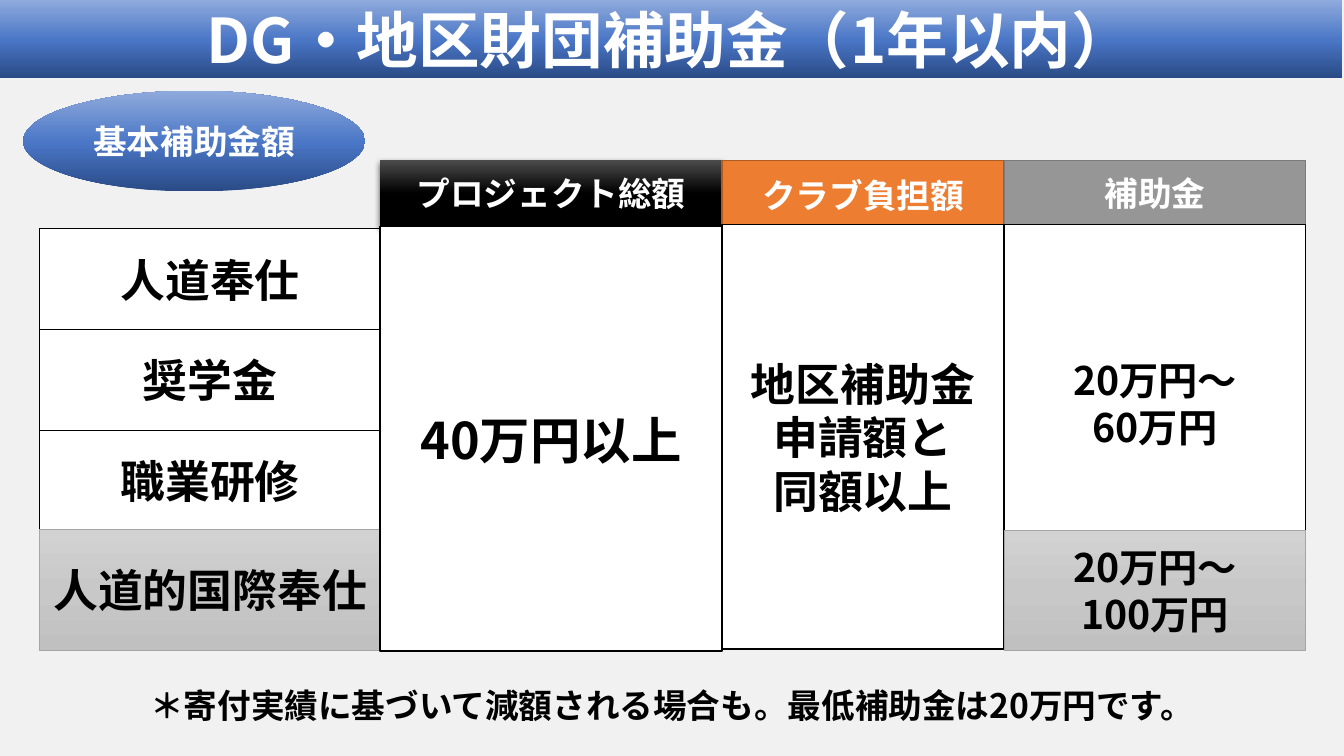
from lxml.etree import SubElement
from pptx import Presentation
from pptx.dml.color import RGBColor
from pptx.enum.shapes import MSO_SHAPE
from pptx.enum.text import MSO_ANCHOR, MSO_AUTO_SIZE, PP_ALIGN
from pptx.oxml.ns import qn
from pptx.util import Inches, Pt

COLORS = {
    "background": "F1F1F1", "white": "FFFFFF", "black": "000000",
    "orange": "ED7D31", "orange_line": "AF5C24",
    "gray": "969696", "gray_line": "7A7A7A", "silver_line": "A5A5A5",
}
# Each gradient: stops as (percent, colour), then the angle counted counter-clockwise
GRADIENTS = {
    "blue": ([(0, "2A4B86"), (48, "4A76C6"), (100, "8FAADC")], 90),
    "silver": ([(0, "D2D2D2"), (50, "C8C8C8"), (100, "C0C0C0")], 270),
    "black_gloss": ([(0, "4B4B4B"), (50, "000000"), (100, "000000")], 270),
}


class GrantSlide:
    """Holds the shared style and the slide being built."""

    font = "Noto Sans CJK JP"

    def __init__(self, presentation):
        self.slide = presentation.slides.add_slide(presentation.slide_layouts[5])
        fill = self.slide.background.fill
        fill.solid()
        fill.fore_color.rgb = self.color("background")

    def color(self, name):
        return RGBColor.from_string(COLORS[name])

    def place(self, shape, box):
        shape.left, shape.top, shape.width, shape.height = map(Inches, box)

    def paint(self, shape, fill):
        if fill not in GRADIENTS:
            shape.fill.solid()
            shape.fill.fore_color.rgb = self.color(fill)
            return
        stops, angle = GRADIENTS[fill]
        shape.fill.gradient()
        shape.fill.gradient_angle = angle
        stop_list = shape._element.spPr.find(".//" + qn("a:gsLst"))
        for stop in list(stop_list):
            stop_list.remove(stop)
        for percent, value in stops:
            stop = SubElement(stop_list, qn("a:gs"), pos=str(percent * 1000))
            SubElement(stop, qn("a:srgbClr"), val=value)

    def add_lines(self, shape, lines, size, color, align=PP_ALIGN.CENTER):
        frame = shape.text_frame
        frame.word_wrap = True
        for index, line in enumerate(lines):
            paragraph = frame.paragraphs[0] if index == 0 else frame.add_paragraph()
            paragraph.alignment = align
            run = paragraph.add_run()
            run.text = line
            run.font.size = Pt(size)
            run.font.bold = True
            run.font.name = self.font
            run.font.color.rgb = self.color(color)
            SubElement(run._r.get_or_add_rPr(), qn("a:ea"), typeface=self.font)

    def title(self, box, text):
        shape = self.slide.shapes.title
        self.place(shape, box)
        self.paint(shape, "blue")
        shape.text_frame.auto_size = MSO_AUTO_SIZE.NONE
        shape.text_frame.vertical_anchor = MSO_ANCHOR.MIDDLE
        self.add_lines(shape, [text], 44, "white")

    def panel(self, box, lines, size, fill="white", line="black", line_width=1,
              color="black", kind=MSO_SHAPE.RECTANGLE):
        shape = self.slide.shapes.add_shape(kind, *map(Inches, box))
        shape.shadow.inherit = False
        self.paint(shape, fill)
        if line:
            shape.line.color.rgb = self.color(line)
            shape.line.width = Pt(line_width)
        else:
            shape.line.fill.background()
        shape.text_frame.vertical_anchor = MSO_ANCHOR.MIDDLE
        self.add_lines(shape, lines, size, color)
        return shape

    def drop_shadow(self, shape):
        effects = shape._element.spPr.find(qn("a:effectLst"))
        shadow = SubElement(effects, qn("a:outerShdw"), blurRad=str(int(Pt(4.5))),
                            dist=str(int(Pt(1.5))), dir="5400000", rotWithShape="0")
        tone = SubElement(shadow, qn("a:srgbClr"), val=COLORS["black"])
        SubElement(tone, qn("a:alpha"), val="63000")

    def note(self, box, text, indent):
        shape = self.slide.shapes.add_textbox(*map(Inches, box))
        shape.text_frame.margin_left = Inches(indent)
        self.add_lines(shape, [text], 24, "black", PP_ALIGN.LEFT)


def main():
    presentation = Presentation()
    presentation.slide_width = Inches(13.33)
    presentation.slide_height = Inches(7.5)
    page = GrantSlide(presentation)

    # Title band
    page.title((-0.02, 0, 13.33, 0.77), "DG・地区財団補助金（1年以内）")

    # Column positions
    label_x, project_x, club_x, grant_x = 0.39, 3.77, 7.16, 9.96
    wide, club_width, grant_width = 3.39, 2.8, 2.99
    header_y = 1.59

    # Row labels
    for row, label in enumerate(["人道奉仕", "奨学金", "職業研修"]):
        page.panel((label_x, 2.27 + row, wide, 1), [label], 32)
    page.panel((label_x, 5.25, wide, 1.2), ["人道的国際奉仕"], 32,
               "silver", "silver_line", 0.5)

    # Project total column
    header = page.panel((project_x, header_y, wide, 0.66), ["プロジェクト総額"], 24,
                        "black_gloss", None, color="white")
    page.drop_shadow(header)
    page.panel((project_x, 2.25, wide, 4.21), ["40万円以上"], 36)

    # Club share column
    page.panel((club_x, header_y, club_width, 0.68), ["クラブ負担額"], 24,
               "orange", "orange_line", color="white")
    page.panel((club_x, 2.23, club_width, 4.21), ["地区補助金申請額と", "同額以上"], 32)

    # Grant column
    page.panel((grant_x, header_y, grant_width, 0.65), ["補助金"], 24,
               "gray", "gray_line", color="white")
    grant = page.panel((grant_x, 2.23, grant_width, 3.05), ["20万円～", "60万円"], 28)
    grant.text_frame.margin_top = Inches(0.55)
    page.panel((grant_x, 5.26, grant_width, 1.19), ["20万円～", "100万円"], 28,
               "silver", "silver_line", 0.5)

    # Footnote and badge
    page.note((1.06, 6.75, 11.21, 0.5),
              "＊寄付実績に基づいて減額される場合も。最低補助金は20万円です。", 0.43)
    page.panel((0.23, 0.9, wide, 1), ["基本補助金額"], 24, "blue", None,
               color="white", kind=MSO_SHAPE.OVAL)

    presentation.save("out.pptx")


if __name__ == "__main__":
    main()
